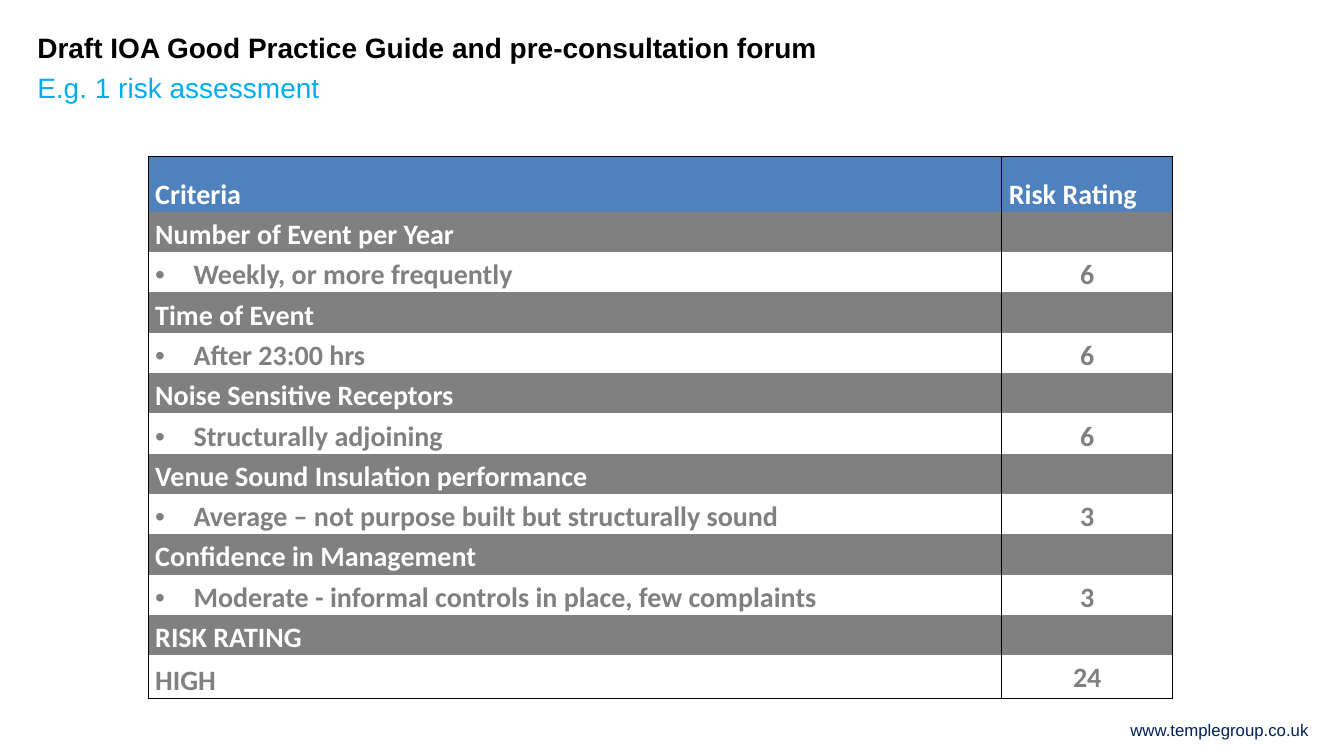
from dataclasses import dataclass

from lxml import etree
from pptx import Presentation
from pptx import util as u
from pptx.dml.color import RGBColor
from pptx.enum import text
from pptx.oxml.ns import qn


@dataclass(frozen=True)
class Theme:
    black: str = "000000"
    white: str = "FFFFFF"
    header: str = "4F81BD"
    grey: str = "808080"
    accent: str = "00AEEF"
    navy: str = "002159"
    heading_font: str = "Arial"
    table_font: str = "Calibri"
    body_size: int = 20
    footer_size: int = 12


THEME = Theme()
WIDTH, HEIGHT = 13.33, 7.5

ASSESSMENT = [
    ("header", "Criteria", "Risk Rating"),
    ("section", "Number of Event per Year", ""),
    ("item", "Weekly, or more frequently", "6"),
    ("section", "Time of Event", ""),
    ("item", "After 23:00 hrs", "6"),
    ("section", "Noise Sensitive Receptors", ""),
    ("item", "Structurally adjoining", "6"),
    ("section", "Venue Sound Insulation performance", ""),
    ("item", "Average – not purpose built but structurally sound", "3"),
    ("section", "Confidence in Management", ""),
    ("item", "Moderate - informal controls in place, few complaints", "3"),
    ("section", "RISK RATING", ""),
    ("total", "HIGH", "24"),
]
ROW_HEIGHTS = {"header": 0.55, "section": 0.4, "item": 0.4, "total": 0.43}
FILLS = {"header": THEME.header, "section": THEME.grey}


def style_runs(paragraph, font, size, color, bold=False):
    for run in paragraph.runs:
        run.font.name = font
        run.font.size = u.Pt(size)
        run.font.bold = bold
        run.font.color.rgb = RGBColor.from_string(color)


def add_line_of_text(slide, box, wording, size, color, bold=False,
                     align=text.PP_ALIGN.LEFT):
    frame = slide.shapes.add_textbox(*map(u.Inches, box)).text_frame
    frame.margin_left = frame.margin_right = 0
    frame.margin_top = frame.margin_bottom = 0
    frame.word_wrap = True
    frame.text = wording
    frame.paragraphs[0].alignment = align
    style_runs(frame.paragraphs[0], THEME.heading_font, size, color, bold)


def add_heading(slide, box):
    left, top, width, height = box
    add_line_of_text(slide, (left, top, width, height / 2),
                     "Draft IOA Good Practice Guide and pre-consultation forum",
                     THEME.body_size, THEME.black, bold=True)
    add_line_of_text(slide, (left, top + height / 2, width, height / 2),
                     "E.g. 1 risk assessment", THEME.body_size, THEME.accent)


def set_borders(cell, drawn):
    properties = cell._tc.get_or_add_tcPr()
    for side in "LRTB":
        line = etree.SubElement(properties, qn(f"a:ln{side}"), w=str(u.Pt(1)))
        if side in drawn:
            fill = etree.SubElement(line, qn("a:solidFill"))
            etree.SubElement(fill, qn("a:srgbClr"), val=THEME.black)
        else:
            etree.SubElement(line, qn("a:noFill"))


def add_bullet(paragraph):
    properties = paragraph._p.get_or_add_pPr()
    indent = u.Inches(0.38)
    properties.set("marL", str(indent))
    properties.set("indent", str(-indent))
    etree.SubElement(properties, qn("a:buFont"), typeface="Arial")
    etree.SubElement(properties, qn("a:buChar"), char="•")


def fill_cell(cell, kind, column, wording):
    edges = {"header": "LRT", "total": "LRB"}.get(kind, "LR")
    set_borders(cell, edges)
    if kind in FILLS:
        cell.fill.solid()
        cell.fill.fore_color.rgb = RGBColor.from_string(FILLS[kind])
    else:
        cell.fill.background()
    cell.margin_left = cell.margin_right = u.Inches(0.07)
    cell.margin_top = cell.margin_bottom = 0
    is_total_score = kind == "total" and column == 1
    cell.vertical_anchor = (text.MSO_ANCHOR.TOP if is_total_score
                            else text.MSO_ANCHOR.BOTTOM)
    cell.text_frame.text = wording
    paragraph = cell.text_frame.paragraphs[0]
    paragraph.line_spacing = 1.15
    if kind == "item" and column == 0:
        add_bullet(paragraph)
    if kind != "header" and column == 1:
        paragraph.alignment = text.PP_ALIGN.CENTER
    color = THEME.white if kind in FILLS else THEME.grey
    style_runs(paragraph, THEME.table_font, THEME.body_size, color, bold=True)


def add_risk_table(slide, box):
    risk_table = slide.shapes.add_table(
        len(ASSESSMENT), 2, *map(u.Inches, box)).table
    risk_table.first_row = risk_table.horz_banding = False
    rating_width = box[2] / 6
    risk_table.columns[0].width = u.Inches(box[2] - rating_width)
    risk_table.columns[1].width = u.Inches(rating_width)
    for row, (kind, *wordings) in zip(risk_table.rows, ASSESSMENT):
        row.height = u.Inches(ROW_HEIGHTS[kind])
        for column, wording in enumerate(wordings):
            fill_cell(row.cells[column], kind, column, wording)


def add_footer(slide, box):
    add_line_of_text(slide, box, "www.templegroup.co.uk", THEME.footer_size,
                     THEME.navy, align=text.PP_ALIGN.RIGHT)


def main():
    deck = Presentation()
    deck.slide_width, deck.slide_height = u.Inches(WIDTH), u.Inches(HEIGHT)
    slide = deck.slides.add_slide(deck.slide_layouts[6])
    add_footer(slide, (9.87, 7.14, 3.11, 0.2))
    add_heading(slide, (0.37, 0.3, 10.47, 0.8))
    add_risk_table(slide, (1.47, 1.55, 10.16, sum(
        ROW_HEIGHTS[kind] for kind, *_ in ASSESSMENT)))
    deck.save("out.pptx")


if __name__ == "__main__":
    main()
